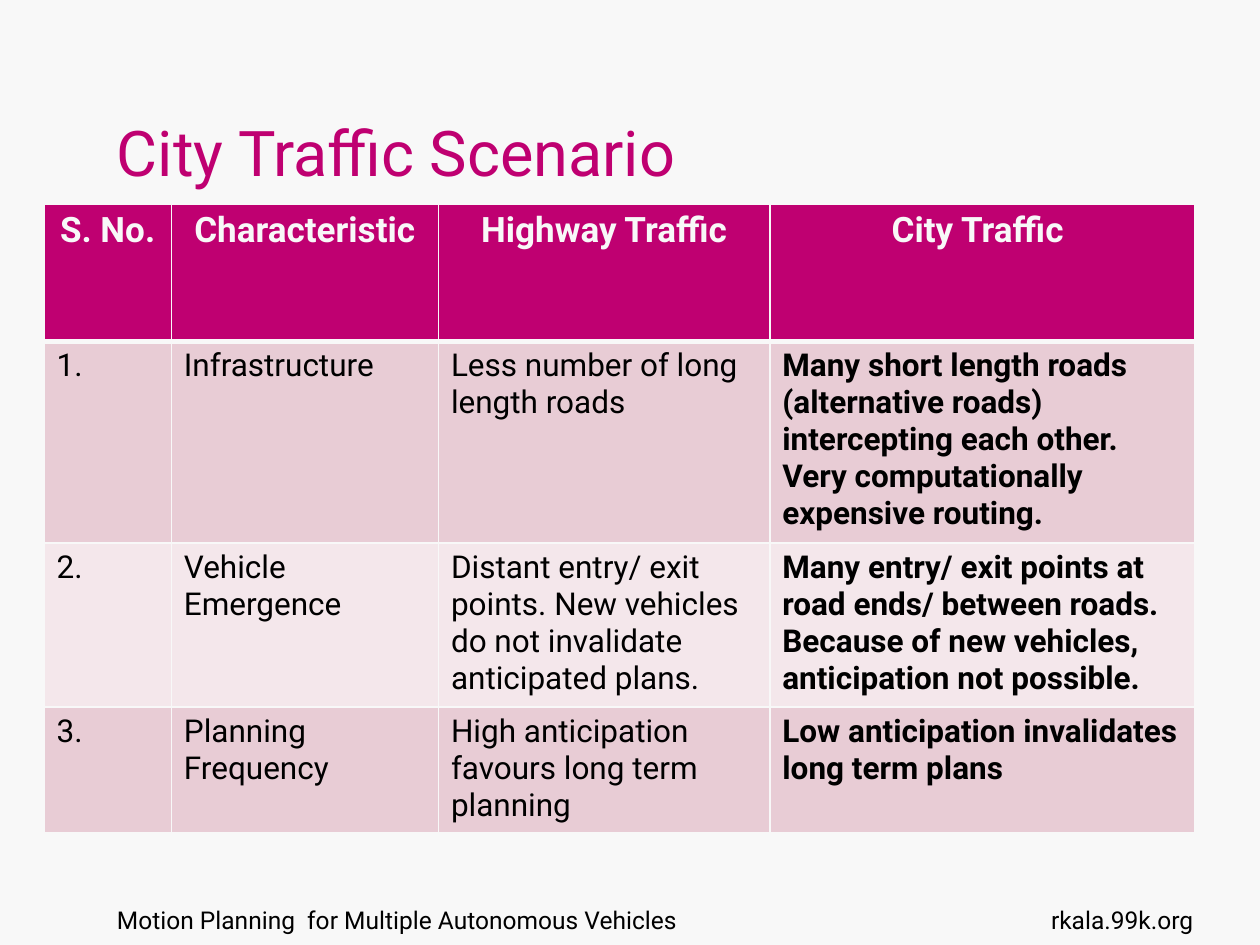
from dataclasses import dataclass

from lxml import etree
from pptx import Presentation
from pptx.dml.color import RGBColor
from pptx.enum.text import MSO_ANCHOR, PP_ALIGN
from pptx.oxml.ns import qn
from pptx.util import Inches, Pt

LEFT, CENTER, RIGHT = PP_ALIGN.LEFT, PP_ALIGN.CENTER, PP_ALIGN.RIGHT
TOP, BOTTOM = MSO_ANCHOR.TOP, MSO_ANCHOR.BOTTOM


@dataclass(frozen=True)
class Theme:
    """Hold the colours and type sizes."""
    font: str = "Roboto"
    paper: str = "F8F8F8"
    ink: str = "000000"
    accent: str = "BF0071"
    bands: tuple = ("E8CCD5", "F4E7EB")
    title: int = 36
    head: int = 20
    body: int = 18
    foot: int = 14
    thin: int = 1
    thick: int = 3


THEME = Theme()
COLS = (1.01, 2.12, 2.63, 3.37)
ROWS = (1.09, 1.57, 1.27, 0.98)
CELLS = (
    ("S. No.", "Characteristic", "Highway Traffic", "City Traffic "),
    ("1.", "Infrastructure", "Less number of long length roads",
     "Many short length roads (alternative roads) intercepting each other. "
     "Very computationally expensive routing."),
    ("2.", "Vehicle Emergence",
     "Distant entry/ exit points. New vehicles do not invalidate anticipated plans.",
     "Many entry/ exit points at road ends/ between roads.  "
     "Because of new vehicles, anticipation not possible."),
    ("3.", "Planning Frequency", "High anticipation favours long term planning",
     "Low anticipation invalidates long term plans"),
)


def write(frame, text, size, color, align=LEFT, bold=False):
    """Put one styled paragraph in a text frame."""
    frame.text = text
    para = frame.paragraphs[0]
    para.alignment = align
    font = para.runs[0].font
    font.name, font.size, font.bold = THEME.font, Pt(size), bold
    font.color.rgb = RGBColor.from_string(color)


def add_text(slide, box, text, size, color, align=LEFT, anchor=TOP, wrap=True):
    """Add a text box."""
    frame = slide.shapes.add_textbox(*map(Inches, box)).text_frame
    frame.word_wrap = wrap
    frame.vertical_anchor = anchor
    write(frame, text, size, color, align)


def add_edges(cell, widths):
    """Draw the borders of a cell, given as a width for each side."""
    props = cell._tc.get_or_add_tcPr()
    for spot, (side, width) in enumerate(widths.items()):
        line = etree.Element(qn(f"a:ln{side}"), w=str(Pt(width)))
        fill = etree.SubElement(line, qn("a:solidFill"))
        etree.SubElement(fill, qn("a:srgbClr"), val=THEME.paper)
        props.insert(spot, line)


def fill_cell(cell, text, row, col):
    """Style a cell by its row and column."""
    head = row == 0
    back = THEME.accent if head else THEME.bands[(row - 1) % 2]
    cell.fill.solid()
    cell.fill.fore_color.rgb = RGBColor.from_string(back)
    if head:
        write(cell.text_frame, text, THEME.head, THEME.paper, CENTER, True)
    else:
        last = col == len(COLS) - 1
        write(cell.text_frame, text, THEME.body, THEME.ink, bold=last)
    add_edges(cell, {
        "L": THEME.thin,
        "R": THEME.thin,
        "T": THEME.thick if row == 1 else THEME.thin,
        "B": THEME.thick if head else THEME.thin,
    })


def add_grid(slide, left, top):
    """Add the table that compares traffic."""
    size = map(Inches, (left, top, sum(COLS), sum(ROWS)))
    table = slide.shapes.add_table(len(ROWS), len(COLS), *size).table
    for col, width in zip(table.columns, COLS):
        col.width = Inches(width)
    for row, height in zip(table.rows, ROWS):
        row.height = Inches(height)
    for r, texts in enumerate(CELLS):
        for c, text in enumerate(texts):
            fill_cell(table.cell(r, c), text, r, c)


def main():
    """Build and save the slide."""
    deck = Presentation()
    deck.slide_width, deck.slide_height = Inches(10), Inches(7.5)
    slide = deck.slides.add_slide(deck.slide_layouts[6])
    back = slide.background.fill
    back.solid()
    back.fore_color.rgb = RGBColor.from_string(THEME.paper)
    add_text(slide, (0.83, 7.13, 6.93, 0.52),
             "Motion Planning  for Multiple Autonomous Vehicles", THEME.foot, THEME.ink)
    add_text(slide, (0.83, 0.3, 6.77, 1.25), "City Traffic Scenario",
             THEME.title, THEME.accent, anchor=BOTTOM, wrap=False)
    add_text(slide, (8.07, 7.13, 1.5, 0.52), "rkala.99k.org",
             THEME.foot, THEME.ink, RIGHT)
    add_grid(slide, 0.35, 1.62)
    deck.save("out.pptx")


if __name__ == "__main__":
    main()
